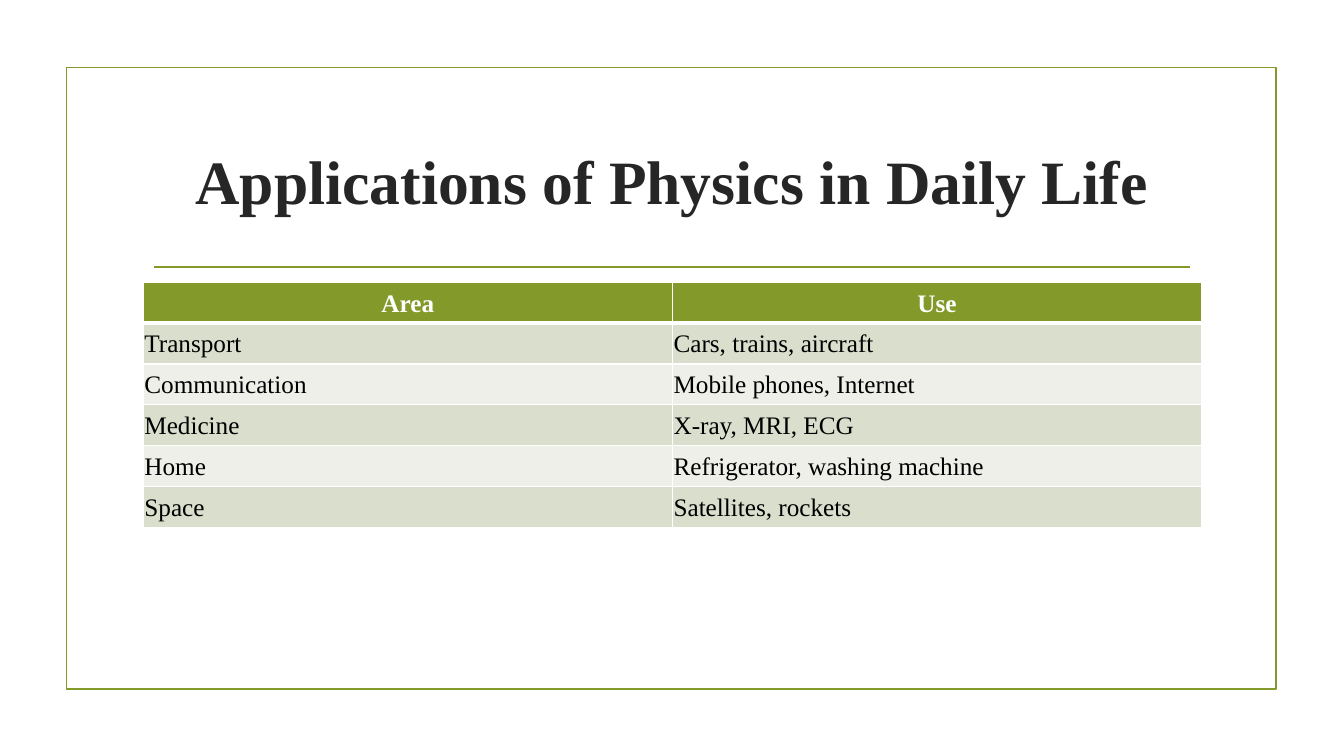
from dataclasses import dataclass

from lxml.etree import SubElement
from pptx import Presentation
from pptx.dml.color import RGBColor
from pptx.enum.shapes import MSO_CONNECTOR, MSO_SHAPE
from pptx.enum.text import MSO_ANCHOR, PP_ALIGN
from pptx.oxml.ns import qn
from pptx.slide import Slide
from pptx.table import _Cell as Cell
from pptx.text.text import _Paragraph as Paragraph
from pptx.util import Cm, Pt


@dataclass(frozen=True)
class Theme:
    font: str = "Times New Roman"
    accent: str = "83992A"
    title: str = "262626"
    body: str = "000000"
    white: str = "FFFFFF"
    bands: tuple[str, str] = ("D9DECD", "EDEFE8")
    title_size: float = 44
    table_size: float = 18
    outline: float = 1.25
    cell_border: float = 1
    header_border: float = 3


@dataclass(frozen=True)
class Application:
    area: str
    use: str


THEME = Theme()
HEADER = Application("Area", "Use")
APPLICATIONS = [
    Application("Transport", "Cars, trains, aircraft"),
    Application("Communication", "Mobile phones, Internet"),
    Application("Medicine", "X-ray, MRI, ECG"),
    Application("Home", "Refrigerator, washing machine"),
    Application("Space", "Satellites, rockets"),
]
CONTENT_LEFT, CONTENT_WIDTH = Cm(3.61), Cm(26.67)
ROW_HEIGHT = Cm(1.03)


def rgb(colour: str) -> RGBColor:
    return RGBColor.from_string(colour)


def style_text(paragraph: Paragraph, size: float, colour: str, bold: bool) -> None:
    font = paragraph.font
    font.name, font.size, font.bold = THEME.font, Pt(size), bold
    font.color.rgb = rgb(colour)


def draw_frame(slide: Slide) -> None:
    frame = slide.shapes.add_shape(
        MSO_SHAPE.RECTANGLE, Cm(1.68), Cm(1.7), Cm(30.48), Cm(15.67)
    )
    frame.shadow.inherit = False
    frame.fill.background()
    frame.line.color.rgb = rgb(THEME.accent)
    frame.line.width = Pt(THEME.outline)


def draw_title_rule(slide: Slide) -> None:
    y = Cm(6.73)
    rule = slide.shapes.add_connector(MSO_CONNECTOR.STRAIGHT, Cm(3.89), y, Cm(30), y)
    rule.line.color.rgb = rgb(THEME.accent)
    rule.line.width = Pt(THEME.outline)
    SubElement(rule.element.spPr, qn("a:effectLst"))


def draw_title(slide: Slide, title: str) -> None:
    box = slide.shapes.add_textbox(CONTENT_LEFT, Cm(2.72), CONTENT_WIDTH, Cm(3.63))
    frame = box.text_frame
    frame.word_wrap = True
    frame.vertical_anchor = MSO_ANCHOR.MIDDLE
    heading = frame.paragraphs[0]
    heading.text = title
    heading.alignment = PP_ALIGN.CENTER
    style_text(heading, THEME.title_size, THEME.title, True)


def add_borders(cell: Cell, top: float, bottom: float) -> None:
    """Add white cell borders; they must precede the fill in the cell's XML."""
    side = THEME.cell_border
    properties = cell._tc.get_or_add_tcPr()
    for tag, width in (("lnL", side), ("lnR", side), ("lnT", top), ("lnB", bottom)):
        border = SubElement(properties, qn(f"a:{tag}"), w=str(Pt(width)))
        fill = SubElement(border, qn("a:solidFill"))
        SubElement(fill, qn("a:srgbClr"), val=THEME.white)


def fill_cell(cell: Cell, text: str, row: int) -> None:
    is_header = row == 0
    thin, thick = THEME.cell_border, THEME.header_border
    add_borders(cell, thick if row == 1 else thin, thick if is_header else thin)
    cell.fill.solid()
    cell.fill.fore_color.rgb = rgb(THEME.accent if is_header else THEME.bands[(row - 1) % 2])
    cell.margin_left = cell.margin_right = cell.margin_top = cell.margin_bottom = Cm(0.03)
    cell.vertical_anchor = MSO_ANCHOR.MIDDLE
    label = cell.text_frame.paragraphs[0]
    label.text = text
    label.line_spacing = 1.07
    label.alignment = PP_ALIGN.CENTER if is_header else PP_ALIGN.LEFT
    style_text(label, THEME.table_size, THEME.white if is_header else THEME.body, is_header)


def draw_applications(slide: Slide, entries: list[Application]) -> None:
    table = slide.shapes.add_table(
        len(entries), 2, CONTENT_LEFT, Cm(7.11), CONTENT_WIDTH, ROW_HEIGHT * len(entries)
    ).table
    for row, entry in enumerate(entries):
        for column, text in enumerate((entry.area, entry.use)):
            fill_cell(table.cell(row, column), text, row)


def main() -> None:
    deck = Presentation()
    deck.slide_width, deck.slide_height = Cm(33.87), Cm(19.05)
    slide = deck.slides.add_slide(deck.slide_layouts[6])
    draw_frame(slide)
    draw_title_rule(slide)
    draw_title(slide, "Applications of Physics in Daily Life")
    draw_applications(slide, [HEADER, *APPLICATIONS])
    deck.save("out.pptx")


if __name__ == "__main__":
    main()
